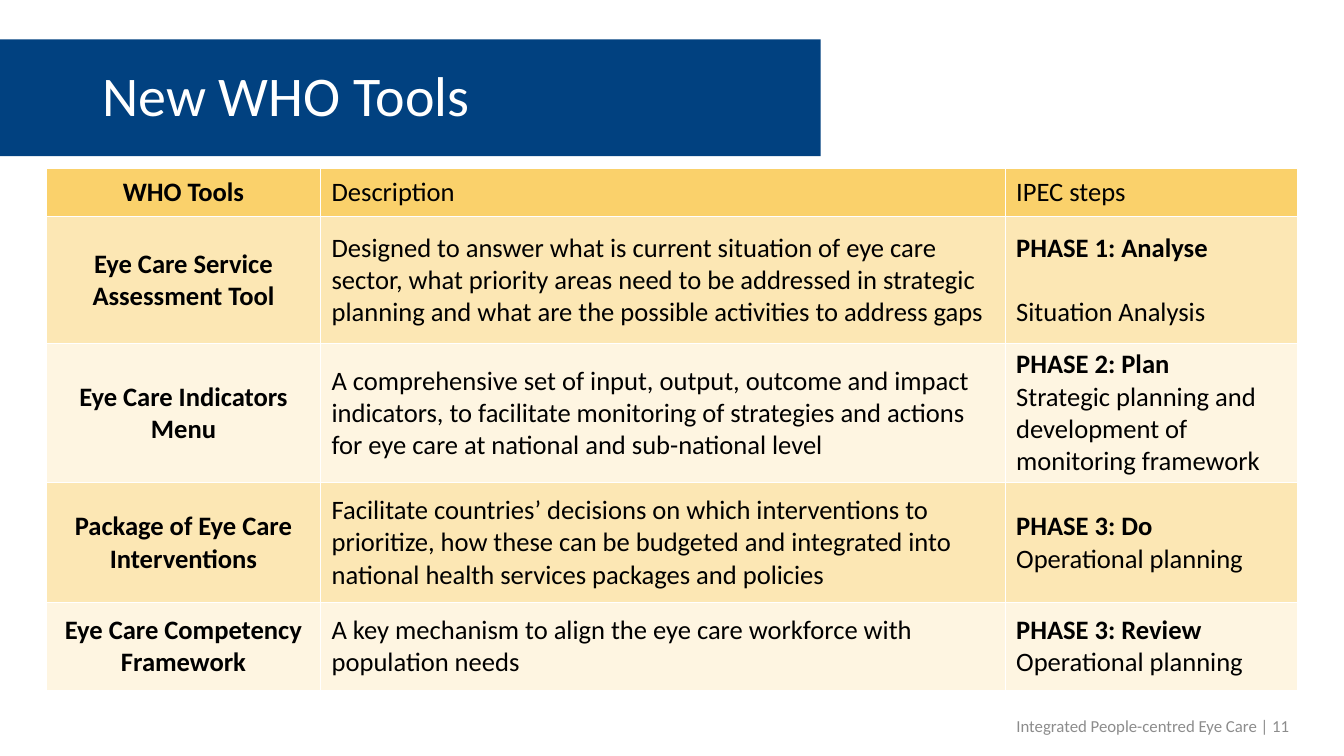
"""Build the slide that maps the new WHO eye care tools to IPEC steps."""
from lxml import etree
from pptx import Presentation
from pptx import util as u
from pptx.dml.color import RGBColor
from pptx.enum import shapes, text
from pptx.oxml import ns

PX = 9144
BLUE = RGBColor(0x01, 0x41, 0x80)
GOLD = RGBColor(0xFA, 0xD1, 0x6B)
WHITE = RGBColor(0xFF, 0xFF, 0xFF)
BLACK = RGBColor(0x00, 0x00, 0x00)
GREY = RGBColor(0x8C, 0x8C, 0x8C)
LEFT, MID, RIGHT = text.PP_ALIGN.LEFT, text.PP_ALIGN.CENTER, text.PP_ALIGN.RIGHT


def box(*dims):
    return [n * PX for n in dims]


def write(par, words, align, size, color, bold=False):
    par.alignment = align
    run = par.add_run()
    run.text = words
    look = {"name": "Calibri", "size": u.Pt(size), "bold": bold}
    for key, val in look.items():
        setattr(run.font, key, val)
    run.font.color.rgb = color


deck = Presentation()
deck.slide_width, deck.slide_height = box(1333, 750)
slide = deck.slides.add_slide(deck.slide_layouts[6])

band = slide.shapes.add_shape(shapes.MSO_SHAPE.RECTANGLE, *box(0, 39, 814, 116))
band.shadow.inherit = False
band.fill.solid()
band.fill.fore_color.rgb = BLUE
band.line.fill.background()

WIDTHS = [272, 679, 290]
HEIGHTS = [48, 126, 137, 119, 87]
ROWS = [
    ("WHO Tools", "Description", ["IPEC steps"]),
    ("Eye Care Service Assessment Tool",
     "Designed to answer what is current situation of eye care sector, what priority "
     "areas need to be addressed in strategic planning and what are the possible "
     "activities to address gaps",
     ["PHASE 1: Analyse", "Situation Analysis"]),
    ("Eye Care Indicators Menu",
     "A comprehensive set of input, output, outcome and impact indicators, to facilitate "
     "monitoring of strategies and actions for eye care at national and sub-national level",
     ["PHASE 2: Plan", "Strategic planning and development of monitoring framework"]),
    ("Package of Eye Care Interventions",
     "Facilitate countries’ decisions on which interventions to prioritize, how these can "
     "be budgeted and integrated into national health services packages and policies",
     ["PHASE 3: Do", "Operational planning"]),
    ("Eye Care Competency Framework",
     "A key mechanism to align the eye care workforce with population needs",
     ["PHASE 3: Review", "Operational planning"]),
]
CELL = {
    "vertical_anchor": text.MSO_ANCHOR.MIDDLE,
    "margin_left": 11 * PX, "margin_right": 11 * PX,
    "margin_top": 5 * PX, "margin_bottom": 5 * PX,
}

frame = slide.shapes.add_table(
    len(ROWS), len(WIDTHS), *box(46, 167, sum(WIDTHS), sum(HEIGHTS)))
table = frame.table
table.first_row = table.horz_banding = False
for col, width in zip(table.columns, WIDTHS):
    col.width = width * PX
for row, height in zip(table.rows, HEIGHTS):
    row.height = height * PX

for r, (tool, about, steps) in enumerate(ROWS):
    for c, lines in enumerate([[tool], [about], steps]):
        cell = table.cell(r, c)
        for key, val in CELL.items():
            setattr(cell, key, val)
        props = cell._tc.get_or_add_tcPr()
        for side in ("lnL", "lnR", "lnT", "lnB"):
            edge = etree.SubElement(props, ns.qn("a:" + side), w=str(u.Pt(1)))
            paint = etree.SubElement(edge, ns.qn("a:solidFill"))
            etree.SubElement(paint, ns.qn("a:srgbClr"), val=str(WHITE))
        cell.fill.solid()
        cell.fill.fore_color.rgb = GOLD
        if r:
            tint = props.find(".//" + ns.qn("a:srgbClr") + f"[@val='{GOLD}']")
            etree.SubElement(tint, ns.qn("a:alpha"), val="50000" if r % 2 else "20000")
        for n, line in enumerate(lines):
            body = cell.text_frame
            par = body.add_paragraph() if n else body.paragraphs[0]
            bold = c == 0 or (c == 2 and r > 0 and n == 0)
            write(par, line, LEFT if c else MID, 19, BLACK, bold)
            if r == 1 and n:
                par.space_before = u.Pt(23)

LABELS = [
    ("New WHO Tools", (92, 40, 674, 115), LEFT, 40, WHITE),
    ("Integrated People-centred Eye Care | 11", (989, 700, 300, 40), RIGHT, 12, GREY),
]
for words, dims, align, size, color in LABELS:
    body = slide.shapes.add_textbox(*box(*dims)).text_frame
    body.word_wrap = True
    body.vertical_anchor = text.MSO_ANCHOR.MIDDLE
    write(body.paragraphs[0], words, align, size, color)
    if size == 40:
        body.paragraphs[0].line_spacing = 0.9

deck.save("out.pptx")
